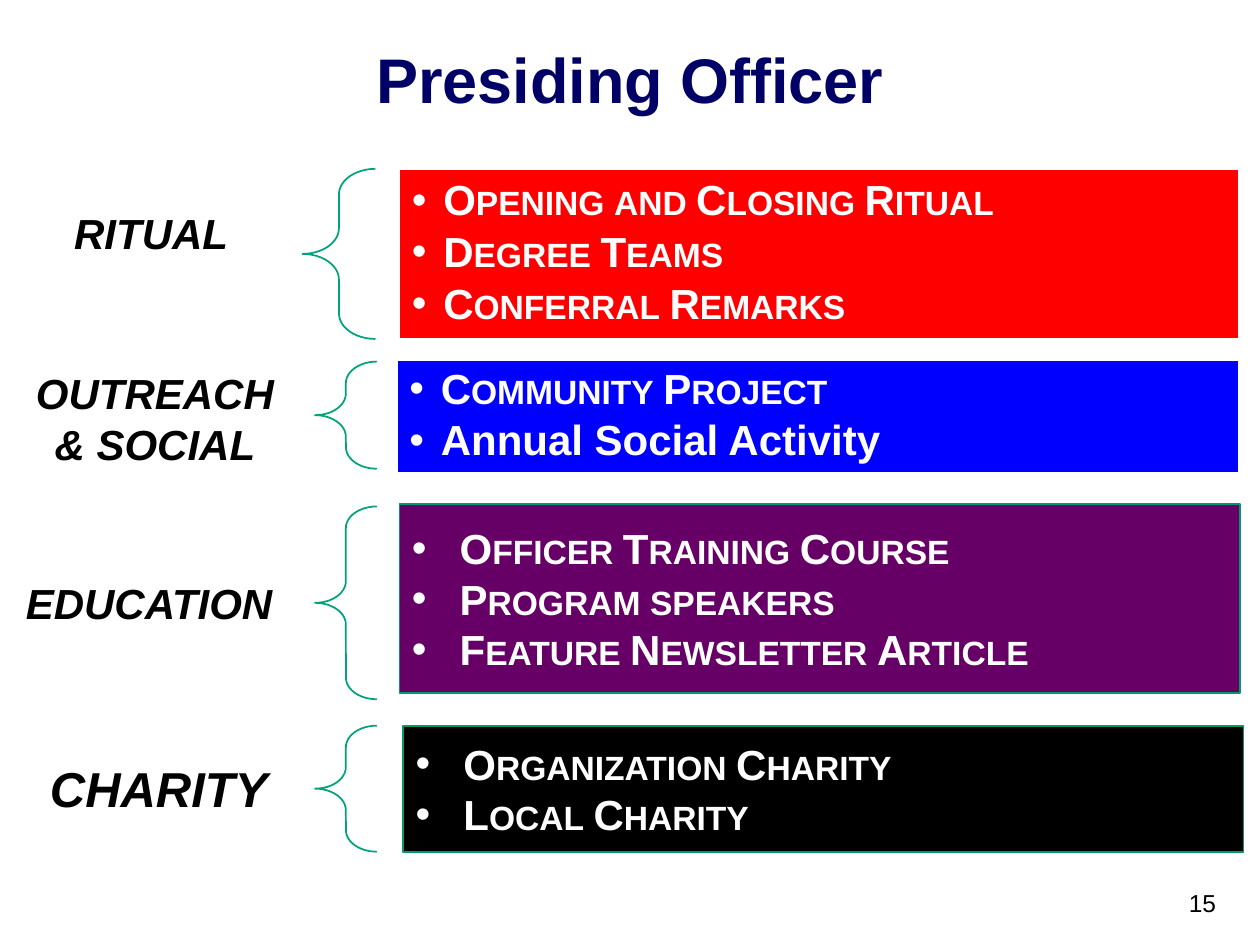
from dataclasses import dataclass
from lxml import etree
from pptx import Presentation
from pptx.dml.color import RGBColor
from pptx.enum.shapes import MSO_SHAPE
from pptx.enum.text import MSO_ANCHOR, PP_ALIGN
from pptx.oxml.ns import qn
from pptx.util import Inches, Pt

RECT, BRACE = MSO_SHAPE.RECTANGLE, MSO_SHAPE.LEFT_BRACE
MIDDLE, TOP = MSO_ANCHOR.MIDDLE, MSO_ANCHOR.TOP
LEFT, CENTER, RIGHT = PP_ALIGN.LEFT, PP_ALIGN.CENTER, PP_ALIGN.RIGHT


@dataclass(frozen=True)
class Theme:
    font: str = "Arial"
    navy: str = "000066"
    black: str = "000000"
    white: str = "FFFFFF"
    red: str = "FF0000"
    blue: str = "0000FF"
    purple: str = "660066"
    brace: str = "00A37B"
    border: str = "009771"
    title: int = 36
    large: int = 28
    body: int = 24
    number: int = 14


@dataclass(frozen=True)
class Box:
    x: float
    y: float
    w: float
    h: float

    def emu(self) -> tuple:
        return tuple(Inches(v) for v in (self.x, self.y, self.w, self.h))


@dataclass(frozen=True)
class Item:
    text: str
    small_caps: bool = True


@dataclass(frozen=True)
class Bullets:
    indent: float
    spacing: float
    after: float


@dataclass(frozen=True)
class Duty:
    label: str
    label_size: int
    label_box: Box
    brace: Box
    panel: Box
    fill: str
    line: str
    bullets: Bullets
    items: tuple


T = Theme()
TIGHT = Bullets(0.25, 0.9, 3.6)
WIDE = Bullets(0.38, 1.0, 0)

DUTIES = (
    Duty("RITUAL", T.body, Box(0, 1.47, 2.4, 0.76), Box(2.4, 1.34, 0.58, 1.35),
         Box(3.17, 1.34, 6.66, 1.35), T.red, T.white, TIGHT,
         (Item("Opening and Closing Ritual"), Item("Degree Teams"),
          Item("Conferral Remarks"))),
    Duty("OUTREACH & SOCIAL", T.body, Box(0, 2.89, 2.46, 0.86),
         Box(2.5, 2.87, 0.49, 0.85), Box(3.15, 2.86, 6.68, 0.89),
         T.blue, T.white, TIGHT,
         (Item("Community Project"), Item("Annual Social Activity", False))),
    Duty("EDUCATION ", T.body, Box(0, 4.59, 2.46, 0.38),
         Box(2.5, 4.02, 0.49, 1.53), Box(3.17, 4, 6.67, 1.5),
         T.purple, T.border, WIDE,
         (Item("Officer Training Course"), Item("Program speakers"),
          Item("Feature Newsletter Article"))),
    Duty("CHARITY", T.large, Box(0.03, 5.88, 2.46, 0.75),
         Box(2.5, 5.76, 0.49, 1), Box(3.2, 5.76, 6.67, 1),
         T.black, T.border, WIDE,
         (Item("Organization Charity"), Item("Local Charity"))),
)


def add_run(p, text: str, size: int, color: str, bold: bool = True,
            italic: bool = False):
    r = p.add_run()
    r.text = text
    r.font.name = T.font
    r.font.size = Pt(size)
    r.font.bold = bold
    r.font.italic = italic
    r.font.color.rgb = RGBColor.from_string(color)
    return r


def add_text(s, box: Box, text: str, size: int, color: str, align=CENTER,
             anchor=MIDDLE, bold: bool = True, italic: bool = False,
             inset: float = 0.1) -> None:
    tf = s.shapes.add_textbox(*box.emu()).text_frame
    tf.word_wrap = True
    tf.vertical_anchor = anchor
    tf.margin_left = tf.margin_right = Inches(inset)
    p = tf.paragraphs[0]
    p.alignment = align
    add_run(p, text, size, color, bold, italic)


def add_outlined(s, kind, box: Box, line: str):
    sp = s.shapes.add_shape(kind, *box.emu())
    sp.shadow.inherit = False
    sp.line.color.rgb = RGBColor.from_string(line)
    sp.line.width = Pt(1)
    return sp


def add_brace(s, box: Box) -> None:
    sp = add_outlined(s, BRACE, box, T.brace)
    sp.fill.background()
    sp.adjustments[0] = 0.35
    sp.adjustments[1] = 0.5


def set_bullet(p, indent: float) -> None:
    pPr = p._p.get_or_add_pPr()
    pPr.set("marL", str(Inches(indent)))
    pPr.set("indent", str(-Inches(indent)))
    etree.SubElement(pPr, qn("a:buFont")).set("typeface", T.font)
    etree.SubElement(pPr, qn("a:buChar")).set("char", "•")


def add_panel(s, duty: Duty) -> None:
    sp = add_outlined(s, RECT, duty.panel, duty.line)
    sp.fill.solid()
    sp.fill.fore_color.rgb = RGBColor.from_string(duty.fill)
    tf = sp.text_frame
    tf.word_wrap = True
    tf.vertical_anchor = MIDDLE
    for i, item in enumerate(duty.items):
        p = tf.add_paragraph() if i else tf.paragraphs[0]
        p.alignment = LEFT
        p.line_spacing = duty.bullets.spacing
        p.space_after = Pt(duty.bullets.after)
        set_bullet(p, duty.bullets.indent)
        r = add_run(p, item.text, T.body, T.white)
        if item.small_caps:
            r.font._element.set("cap", "small")


def add_duty(s, duty: Duty) -> None:
    add_text(s, duty.label_box, duty.label, duty.label_size, T.black,
             italic=True, inset=0.19)
    add_brace(s, duty.brace)
    add_panel(s, duty)


def main() -> None:
    prs = Presentation()
    prs.slide_width, prs.slide_height = Inches(10), Inches(7.5)
    s = prs.slides.add_slide(prs.slide_layouts[6])
    add_text(s, Box(0, 0, 10, 1.25), "Presiding Officer", T.title, T.navy)
    for duty in DUTIES:
        add_duty(s, duty)
    add_text(s, Box(7.67, 7, 2.08, 0.5), "15", T.number, T.black, RIGHT, TOP,
             bold=False)
    prs.save("out.pptx")


if __name__ == "__main__":
    main()
